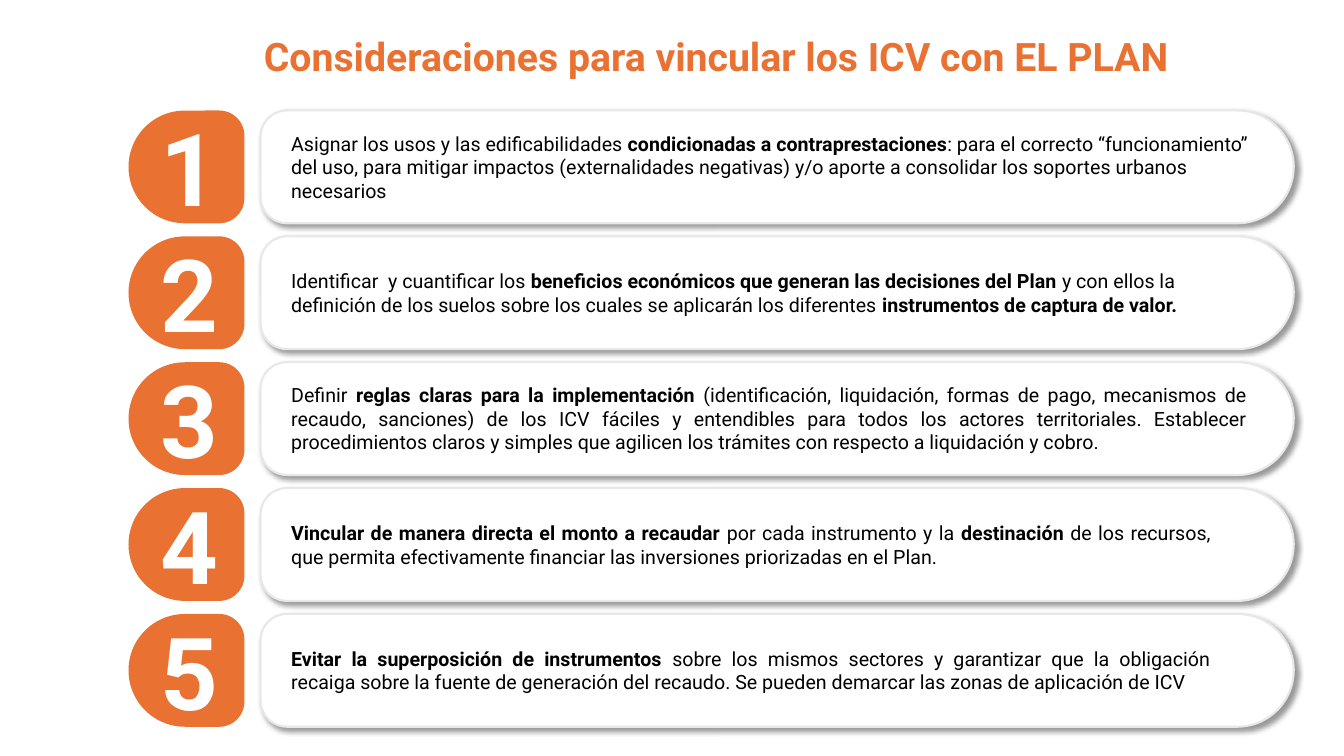
"""Build the slide of five considerations for linking ICV with the plan."""
from lxml.etree import SubElement
from pptx import Presentation
from pptx.dml.color import RGBColor
from pptx.enum.shapes import MSO_SHAPE
from pptx.enum.text import MSO_ANCHOR, MSO_AUTO_SIZE, PP_ALIGN
from pptx.oxml.ns import qn
from pptx.util import Pt

COLORS = {
    "accent": "E97132",
    "card": "FFFFFF",
    "border": "E8E8E8",
    "number": "FFFFFF",
    "body": "000000",
    "shadow": "000000",
}
FONT = "Roboto"
FIRST_ROW_CENTER, ROW_PITCH = 119.2, 89.9
BADGE_CENTER, CARD_CENTER = 133.2, 555.1
BADGE_LENGTH, CARD_LENGTH, BAR_BREADTH = 82.8, 738, 80.6
NUMBER_SIZE = (51.1, 94.3)
BODY_LEFT = 200.9

TITLE_FORMAT = {"size": Pt(28), "name": FONT, "bold": True}
NUMBER_FORMAT = {"size": Pt(72), "name": FONT, "bold": True}
BODY_FORMAT = {"size": Pt(14), "name": FONT}
FRAME_FORMAT = {"auto_size": MSO_AUTO_SIZE.SHAPE_TO_FIT_TEXT}

CONSIDERATIONS = [
    (702.7, 41, PP_ALIGN.LEFT, [
        ("Asignar los usos y las edificabilidades ", False),
        ("condicionadas a contraprestaciones", True),
        (": para el correcto “funcionamiento” del uso, para mitigar impactos "
         "(externalidades negativas) y/o aporte a consolidar los soportes "
         "urbanos necesarios", False),
    ]),
    (689, 41, PP_ALIGN.LEFT, [
        ("Identificar  y cuantificar los ", False),
        ("beneficios económicos que generan las decisiones del Plan ", True),
        ("y con ellos la definición de los suelos sobre los cuales se "
         "aplicarán los diferentes ", False),
        ("instrumentos de captura de valor.", True),
    ]),
    (697, 58.3, PP_ALIGN.JUSTIFY, [
        ("Definir ", False),
        ("reglas claras para la implementación ", True),
        ("(identificación, liquidación, formas de pago, mecanismos de "
         "recaudo, sanciones) de los ICV fáciles y entendibles para todos los "
         "actores territoriales. Establecer procedimientos claros y simples "
         "que agilicen los trámites con respecto a liquidación y cobro.", False),
    ]),
    (671, 41, PP_ALIGN.JUSTIFY, [
        ("Vincular de manera directa el monto a recaudar ", True),
        ("por cada instrumento y la ", False),
        ("destinación ", True),
        ("de los recursos, que permita efectivamente financiar las "
         "inversiones priorizadas en el Plan. ", False),
    ]),
    (671, 41, PP_ALIGN.JUSTIFY, [
        ("Evitar la superposición de instrumentos ", True),
        ("sobre los mismos sectores y garantizar que la obligación recaiga "
         "sobre la fuente de generación del recaudo. Se pueden demarcar las "
         "zonas de aplicación de ICV", False),
    ]),
]


def apply_format(target, values):
    """Set each named attribute on the target."""
    for attribute, value in values.items():
        setattr(target, attribute, value)


def add_text(slide, box, runs, font_format, color, align=PP_ALIGN.LEFT, **frame_format):
    """Add a text box whose runs are pairs of wording and boldness."""
    frame = slide.shapes.add_textbox(*map(Pt, box)).text_frame
    apply_format(frame, {**FRAME_FORMAT, "word_wrap": True, **frame_format})
    paragraph = frame.paragraphs[0]
    paragraph.alignment = align
    for wording, bold in runs:
        run = paragraph.add_run()
        run.text = wording
        apply_format(run.font, {**font_format, "bold": bold})
        run.font.color.rgb = RGBColor.from_string(COLORS[color])


def add_bar(slide, center_x, center_y, length, rotation, corner, color):
    """Add a turned bar with one round end and one softly cornered end."""
    bar = slide.shapes.add_shape(
        MSO_SHAPE.ROUND_2_SAME_RECTANGLE,
        Pt(center_x - BAR_BREADTH / 2), Pt(center_y - length / 2),
        Pt(BAR_BREADTH), Pt(length))
    bar.rotation = rotation
    bar.adjustments[0], bar.adjustments[1] = 0.5, corner
    bar.shadow.inherit = False
    bar.fill.solid()
    bar.fill.fore_color.rgb = RGBColor.from_string(COLORS[color])
    bar.line.fill.background()
    return bar


def add_card(slide, center_y):
    """Add a bordered white card with a soft shadow."""
    card = add_bar(slide, CARD_CENTER, center_y, CARD_LENGTH, 90, 0.234, "card")
    card.line.color.rgb = RGBColor.from_string(COLORS["border"])
    card.line.width = Pt(1.5)
    effects = card._element.spPr.find(qn("a:effectLst"))
    shadow = SubElement(effects, qn("a:outerShdw"), {
        "blurRad": str(Pt(4)), "dist": str(Pt(3)), "dir": "2700000",
        "algn": "tl", "rotWithShape": "0"})
    tint = SubElement(shadow, qn("a:srgbClr"), val=COLORS["shadow"])
    SubElement(tint, qn("a:alpha"), val="40000")


def add_consideration(slide, number, width, height, align, runs):
    """Add one numbered row: badge, card, number and wording."""
    center_y = FIRST_ROW_CENTER + (number - 1) * ROW_PITCH
    add_bar(slide, BADGE_CENTER, center_y, BADGE_LENGTH, 270, 0.224, "accent")
    add_card(slide, center_y)
    number_width, number_height = NUMBER_SIZE
    number_box = (BADGE_CENTER - number_width / 2, center_y - number_height / 2,
                  number_width, number_height)
    add_text(slide, number_box, [(str(number), True)], NUMBER_FORMAT, "number",
             word_wrap=False)
    add_text(slide, (BODY_LEFT, center_y - height / 2, width, height), runs,
             BODY_FORMAT, "body", align, vertical_anchor=MSO_ANCHOR.MIDDLE)


def main():
    """Build and save the slide."""
    deck = Presentation()
    apply_format(deck, {"slide_width": Pt(960), "slide_height": Pt(540)})
    slide = deck.slides.add_slide(deck.slide_layouts[6])
    add_text(slide, (181.4, 19.4, 714.2, 41),
             [("Consideraciones para vincular los ICV con EL PLAN", True)],
             TITLE_FORMAT, "accent")
    for number, consideration in enumerate(CONSIDERATIONS, start=1):
        add_consideration(slide, number, *consideration)
    deck.save("out.pptx")


if __name__ == "__main__":
    main()
